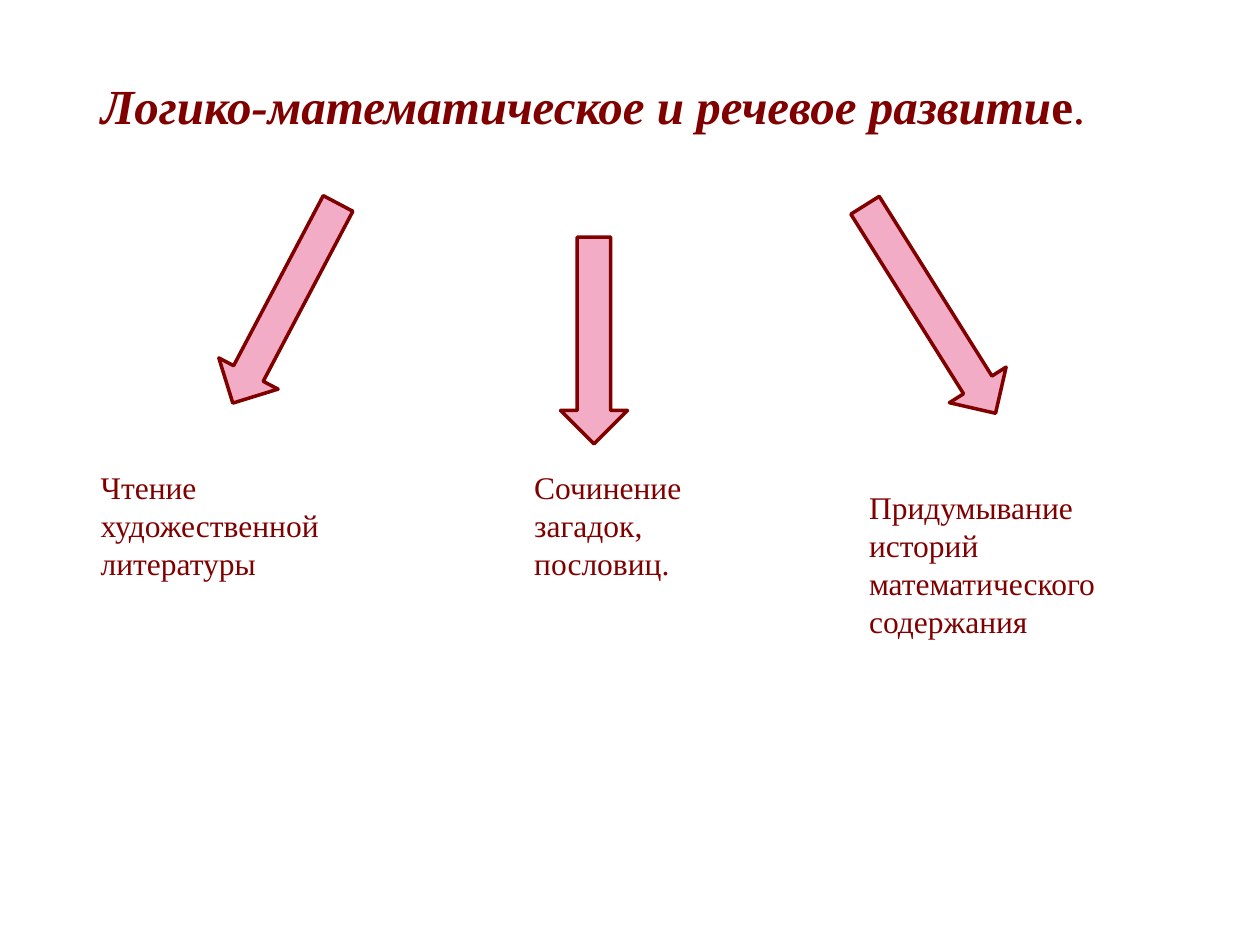
from pptx import Presentation
from pptx.dml.color import RGBColor
from pptx.enum.shapes import MSO_SHAPE
from pptx.enum.text import MSO_ANCHOR, MSO_AUTO_SIZE, PP_ALIGN
from pptx.util import Cm, Pt

ARROW = MSO_SHAPE.DOWN_ARROW
TOP = MSO_ANCHOR.TOP
LEFT = PP_ALIGN.LEFT
FIT = MSO_AUTO_SIZE.SHAPE_TO_FIT_TEXT
MAROON = RGBColor(0x80, 0x00, 0x00)
PINK = RGBColor(0xF2, 0xAC, 0xC5)
FONT = "Times New Roman"


def set_frame(frame):
    frame.word_wrap = True
    frame.auto_size = FIT
    frame.vertical_anchor = TOP
    frame.paragraphs[0].alignment = LEFT


def add_run(frame, text, size, bold=False, italic=False):
    run = frame.paragraphs[0].add_run()
    run.text = text
    font = run.font
    font.name = FONT
    font.size = Pt(size)
    font.bold = bold
    font.italic = italic
    font.color.rgb = MAROON


deck = Presentation()
deck.slide_width = Cm(25.4)
deck.slide_height = Cm(19.05)
slide = deck.slides.add_slide(deck.slide_layouts[5])

# Title
title = slide.shapes.title
title.left, title.top = Cm(1.78), Cm(1.4)
title.width, title.height = Cm(22.02), Cm(1.45)
set_frame(title.text_frame)
add_run(title.text_frame, "Логико-математическое и речевое развити", 28, True, True)
add_run(title.text_frame, "е", 28, True)
add_run(title.text_frame, ".", 28)

# Arrows: left, top, height, turn
arrows = [
    (5.08, 3.84, 4.55, 27.8),
    (11.3, 4.78, 4.17, 0),
    (18.08, 3.76, 4.95, 327.9),
]
for left, top, height, turn in arrows:
    arrow = slide.shapes.add_shape(ARROW, Cm(left), Cm(top), Cm(1.35), Cm(height))
    arrow.rotation = turn
    arrow.shadow.inherit = False
    arrow.fill.solid()
    arrow.fill.fore_color.rgb = PINK
    arrow.line.color.rgb = MAROON
    arrow.line.width = Pt(2)

# Labels: left, top, width, height, text
labels = [
    (1.78, 9.32, 5.77, 2.57, "Чтение художественной литературы"),
    (10.52, 9.32, 4.57, 2.57, "Сочинение загадок, пословиц."),
    (17.27, 9.72, 5.95, 3.33, "Придумывание историй математического содержания"),
]
for left, top, width, height, text in labels:
    label = slide.shapes.add_textbox(Cm(left), Cm(top), Cm(width), Cm(height))
    set_frame(label.text_frame)
    add_run(label.text_frame, text, 18)

deck.save("out.pptx")
